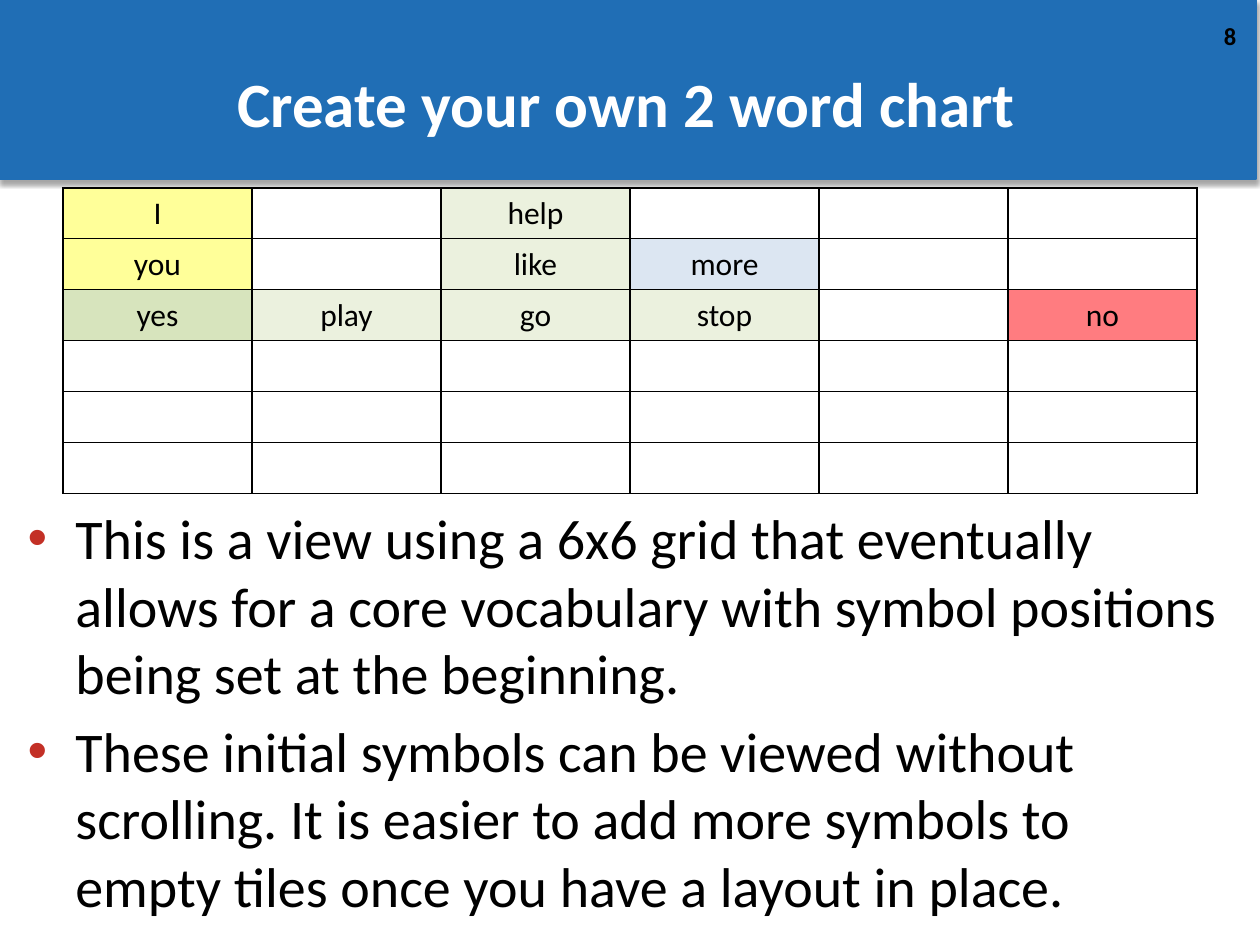
"""Build the slide with a two word chart and notes on its grid."""
from lxml import etree
from pptx import Presentation
from pptx.dml.color import RGBColor
from pptx.enum.shapes import MSO_SHAPE
from pptx.enum.text import MSO_ANCHOR, PP_ALIGN
from pptx.oxml import parse_xml
from pptx.util import Inches, Pt

RECT = MSO_SHAPE.RECTANGLE
MIDDLE, TOP = MSO_ANCHOR.MIDDLE, MSO_ANCHOR.TOP
LEFT, CENTER, RIGHT = PP_ALIGN.LEFT, PP_ALIGN.CENTER, PP_ALIGN.RIGHT
NS = "http://schemas.openxmlformats.org/drawingml/2006/main"

THEME = {
    "font": "Calibri",
    "size": {"title": 36, "body": 32, "cell": 18, "page": 14},
    "color": {
        "blue": "206EB5", "white": "FFFFFF", "black": "000000",
        "red": "C33026", "yellow": "FFFF99", "pale": "EBF1DE",
        "sky": "DCE6F2", "green": "D7E4BD", "rose": "FF7C80",
    },
}
SIZE, COLOR = THEME["size"], THEME["color"]


def style(para, text, role, color="black", bold=False, align=LEFT):
    para.alignment = align
    run = para.add_run()
    run.text = text
    look = {"name": THEME["font"], "size": Pt(SIZE[role]), "bold": bold}
    for key, value in look.items():
        setattr(run.font, key, value)
    run.font.color.rgb = RGBColor.from_string(COLOR[color])


def frame(slide, box, anchor):
    text = slide.shapes.add_textbox(*map(Inches, box)).text_frame
    for key, value in {"word_wrap": True, "vertical_anchor": anchor}.items():
        setattr(text, key, value)
    return text


deck = Presentation()
deck.slide_width, deck.slide_height = Inches(10), Inches(7.5)
slide = deck.slides.add_slide(deck.slide_layouts[6])

banner = slide.shapes.add_shape(RECT, 0, 0, Inches(9.97), Inches(1.42))
banner.fill.solid()
for part in (banner.fill.fore_color, banner.line.color):
    part.rgb = RGBColor.from_string(COLOR["blue"])
banner.line.width = Pt(0.75)
banner._element.spPr.append(parse_xml(
    f'<a:effectLst xmlns:a="{NS}"><a:outerShdw blurRad="{Pt(3.1)}" '
    f'dist="{Pt(1.8)}" dir="5400000" rotWithShape="0">'
    f'<a:srgbClr val="{COLOR["black"]}"><a:alpha val="35000"/></a:srgbClr>'
    '</a:outerShdw></a:effectLst>'))

page = frame(slide, (9.5, 0.12, 0.41, 0.4), TOP)
style(page.paragraphs[0], "8", "page", bold=True, align=RIGHT)
title = frame(slide, (0.5, 0.52, 8.94, 0.58), MIDDLE)
style(title.paragraphs[0], "Create your own 2 word chart", "title",
      "white", True, CENTER)

COUNT = 6
WORDS = {
    (0, 0): ("I", "yellow"), (0, 2): ("help", "pale"),
    (1, 0): ("you", "yellow"), (1, 2): ("like", "pale"),
    (1, 3): ("more", "sky"),
    (2, 0): ("yes", "green"), (2, 1): ("play", "pale"),
    (2, 2): ("go", "pale"), (2, 3): ("stop", "pale"),
    (2, 5): ("no", "rose"),
}
grid = slide.shapes.add_table(COUNT, COUNT, Inches(0.5), Inches(1.49),
                              Inches(9), Inches(2.43)).table
for flag in ("first_row", "horz_banding"):
    setattr(grid, flag, False)
for row in range(COUNT):
    for col in range(COUNT):
        cell = grid.cell(row, col)
        props = cell._tc.get_or_add_tcPr()
        for side in ("lnL", "lnR", "lnT", "lnB"):
            edge = etree.SubElement(props, f"{{{NS}}}{side}", w=str(Pt(1)))
            fill = etree.SubElement(edge, f"{{{NS}}}solidFill")
            etree.SubElement(fill, f"{{{NS}}}srgbClr", val=COLOR["black"])
        word, tint = WORDS.get((row, col), ("", "white"))
        cell.fill.solid()
        cell.fill.fore_color.rgb = RGBColor.from_string(COLOR[tint])
        if word:
            style(cell.text_frame.paragraphs[0], word, "cell", align=CENTER)

NOTES = (
    "This is a view using a 6x6 grid that eventually allows for a core "
    "vocabulary with symbol positions being set at the beginning.",
    "These initial symbols can be viewed without scrolling. It is easier to "
    "add more symbols to empty tiles once you have a layout in place.",
)
body = frame(slide, (0.12, 3.95, 9.81, 3.44), TOP)
body.margin_right = Inches(0.2)
for rank, note in enumerate(NOTES):
    para = body.add_paragraph() if rank else body.paragraphs[0]
    if rank:
        para.space_before = Pt(6.4)
    props = para._p.get_or_add_pPr()
    for key, value in {"marL": 0.38, "indent": -0.38}.items():
        props.set(key, str(Inches(value)))
    mark = etree.SubElement(props, f"{{{NS}}}buClr")
    etree.SubElement(mark, f"{{{NS}}}srgbClr", val=COLOR["red"])
    etree.SubElement(props, f"{{{NS}}}buFont", typeface="Arial")
    etree.SubElement(props, f"{{{NS}}}buChar", char="•")
    style(para, note, "body")

deck.save("out.pptx")
